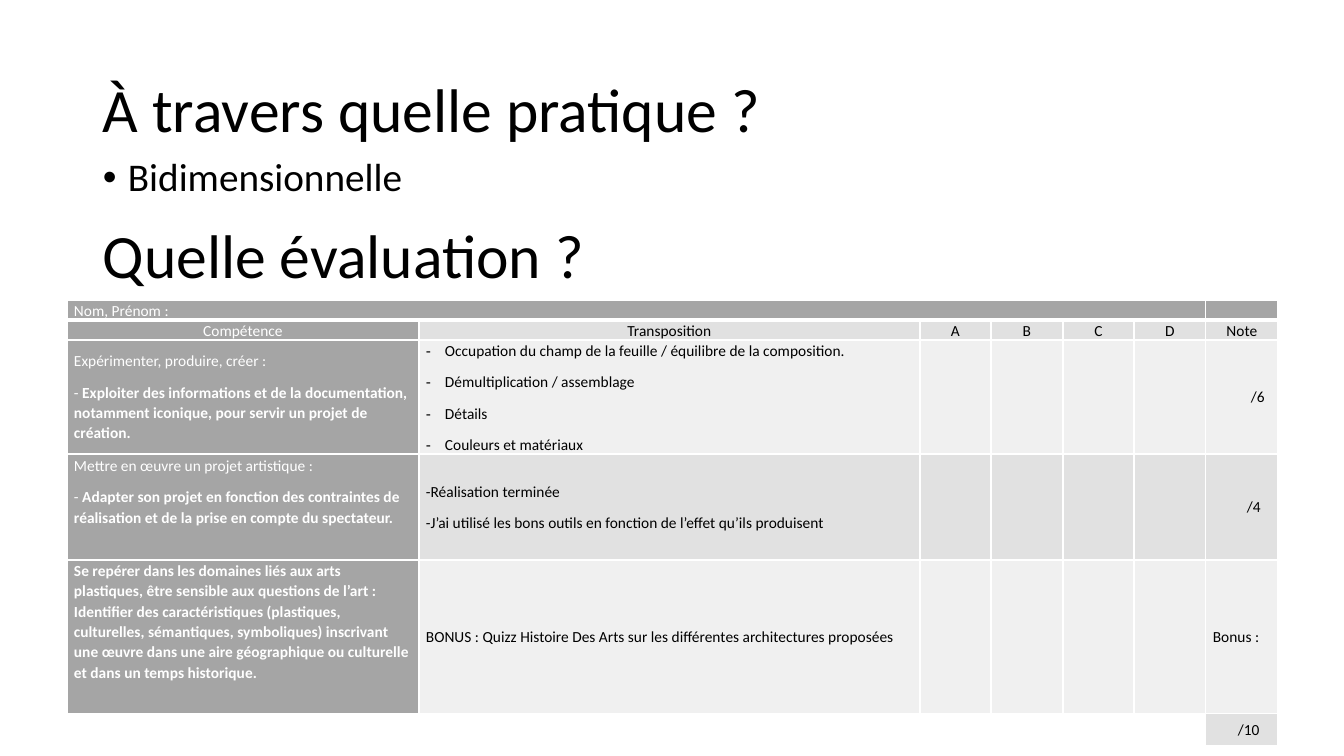
import lxml.etree
import pptx
import pptx.dml.color
import pptx.enum.text
import pptx.oxml.ns
import pptx.util

EMU_PER_PX = 914400 / 100.8
FONT = "Calibri"
BLACK, WHITE = "000000", "FFFFFF"
GREY, BAND, LIGHT = "A5A5A5", "E1E1E1", "F0F0F0"
LEFT, CENTER = pptx.enum.text.PP_ALIGN.LEFT, pptx.enum.text.PP_ALIGN.CENTER
MIDDLE, TOP = pptx.enum.text.MSO_ANCHOR.MIDDLE, pptx.enum.text.MSO_ANCHOR.TOP


def px(length):
    return pptx.util.Emu(round(length * EMU_PER_PX))


def color(hex_string):
    return pptx.dml.color.RGBColor.from_string(hex_string)


def sub_element(parent, tag, **attributes):
    return lxml.etree.SubElement(parent, pptx.oxml.ns.qn(tag), **attributes)


class SlideBuilder:
    cell_size = 11
    cell_margin = 7

    def __init__(self, slide):
        self.slide = slide

    def paragraph(self, paragraph, runs, size, text_color, spacing, after=0,
                  align=LEFT, bullet=None, indent=0):
        """Fill a paragraph; runs is a list of (text, bold) pairs."""
        paragraph.alignment = align
        paragraph.line_spacing = spacing
        paragraph.space_before = pptx.util.Pt(0)
        paragraph.space_after = pptx.util.Pt(after)
        if bullet:
            properties = paragraph._p.get_or_add_pPr()
            properties.set("marL", str(px(indent)))
            properties.set("indent", str(-px(indent)))
            sub_element(properties, "a:buFont", typeface="Arial")
            sub_element(properties, "a:buChar", char=bullet)
        for text, bold in runs:
            run = paragraph.add_run()
            run.text = text
            run.font.name = FONT
            run.font.size = pptx.util.Pt(size)
            run.font.bold = bold
            run.font.color.rgb = color(text_color)

    def text_box(self, left, top, width, height, text, size, anchor, **style):
        shape = self.slide.shapes.add_textbox(px(left), px(top), px(width), px(height))
        frame = shape.text_frame
        frame.word_wrap = True
        frame.vertical_anchor = anchor
        self.paragraph(frame.paragraphs[0], [(text, False)], size, BLACK, 0.9, **style)

    def table(self, left, top, widths, heights):
        frame = self.slide.shapes.add_table(
            len(heights), len(widths), px(left), px(top), px(sum(widths)), px(sum(heights)))
        table = frame.table
        table.first_row = table.horz_banding = False
        for column, width in zip(table.columns, widths):
            column.width = px(width)
        for row, height in zip(table.rows, heights):
            row.height = px(height)
        return table

    def cell(self, cell, fill, paragraphs=(), text_color=BLACK, bottom_border=1,
             margin_left=cell_margin, margin_bottom=0, **style):
        cell.vertical_anchor = MIDDLE
        cell.margin_left, cell.margin_right = px(margin_left), px(self.cell_margin)
        cell.margin_top, cell.margin_bottom = px(0), px(margin_bottom)
        # White borders come before the fill
        properties = cell._tc.get_or_add_tcPr()
        for side in "LRTB":
            points = bottom_border if side == "B" else 1
            line = sub_element(properties, f"a:ln{side}", w=str(pptx.util.Pt(points)))
            sub_element(sub_element(line, "a:solidFill"), "a:srgbClr", val=WHITE)
        cell.fill.solid()
        cell.fill.fore_color.rgb = color(fill)
        # Text, or a small end mark that keeps an empty row low
        frame = cell.text_frame
        for index, runs in enumerate(paragraphs):
            paragraph = frame.add_paragraph() if index else frame.paragraphs[0]
            self.paragraph(paragraph, runs, self.cell_size, text_color, 1.07, after=8, **style)
        if not paragraphs:
            sub_element(frame.paragraphs[0]._p, "a:endParaRPr", sz=str(self.cell_size * 100))


def plain(*texts):
    return [[(text, False)] for text in texts]


def skill(heading, text):
    return [[(heading, False)], [("- ", False), (text, True)]]


def main():
    presentation = pptx.Presentation()
    presentation.slide_width, presentation.slide_height = px(1344), px(756)
    builder = SlideBuilder(presentation.slides.add_slide(presentation.slide_layouts[6]))

    # Headings
    builder.text_box(93, 40, 1159, 146, "À travers quelle pratique ?", 44, MIDDLE)
    builder.text_box(93, 153, 1159, 127, "Bidimensionnelle", 28, TOP, bullet="•", indent=25)
    builder.text_box(93, 186, 1159, 146, "Quelle évaluation ?", 44, MIDDLE)

    # Assessment grid
    table = builder.table(67, 300, [352, 501, 71, 72, 71, 72, 72],
                          [20, 20, 114, 106, 154, 32])
    last_row, note_column = 5, 6

    # Name row
    for column in range(note_column + 1):
        text = [] if column else plain("Nom, Prénom :")
        builder.cell(table.cell(0, column), GREY, text, WHITE, bottom_border=3)
    table.cell(0, 0).merge(table.cell(0, note_column - 1))

    # Column titles
    titles = ["Compétence", "Transposition", "A", "B", "C", "D", "Note"]
    for column, title in enumerate(titles):
        fill, text_color = (BAND, BLACK) if column else (GREY, WHITE)
        builder.cell(table.cell(1, column), fill, plain(title), text_color, align=CENTER)

    # Criteria: fill, skill, space under skill, transposition, its style, note, note indent
    criteria = [
        (LIGHT,
         skill("Expérimenter, produire, créer :",
               "Exploiter des informations et de la documentation, notamment iconique, "
               "pour servir un projet de création."), 0,
         plain("Occupation du champ de la feuille / équilibre de la composition.",
               "Démultiplication / assemblage", "Détails", "Couleurs et matériaux"),
         {"bullet": "-", "indent": 19}, "/6", 45),
        (BAND,
         skill("Mettre en œuvre un projet artistique :",
               "Adapter son projet en fonction des contraintes de réalisation et de la "
               "prise en compte du spectateur."), 31,
         plain("-Réalisation terminée",
               "-J’ai utilisé les bons outils en fonction de l’effet qu’ils produisent"),
         {}, "/4", 41),
        (LIGHT,
         [[("Se repérer dans les domaines liés aux arts plastiques, être sensible aux "
            "questions de l’art : Identifier des caractéristiques (plastiques, culturelles, "
            "sémantiques, symboliques) inscrivant une œuvre dans une aire géographique ou "
            "culturelle et dans un temps historique.", True)]], 31,
         plain("BONUS : Quizz Histoire Des Arts sur les différentes architectures proposées"),
         {}, "Bonus :", 7),
    ]
    for row, criterion in enumerate(criteria, start=2):
        fill, competence, space_under, transposition, style, note, note_indent = criterion
        builder.cell(table.cell(row, 0), GREY, competence, WHITE, margin_bottom=space_under)
        builder.cell(table.cell(row, 1), fill, transposition, **style)
        for column in range(2, note_column):
            builder.cell(table.cell(row, column), fill)
        builder.cell(table.cell(row, note_column), fill, plain(note), margin_left=note_indent)

    # Total
    for column in range(note_column):
        builder.cell(table.cell(last_row, column), WHITE)
    table.cell(last_row, 0).merge(table.cell(last_row, note_column - 1))
    builder.cell(table.cell(last_row, note_column), BAND, plain("/10"), margin_left=32)

    presentation.save("out.pptx")


if __name__ == "__main__":
    main()
